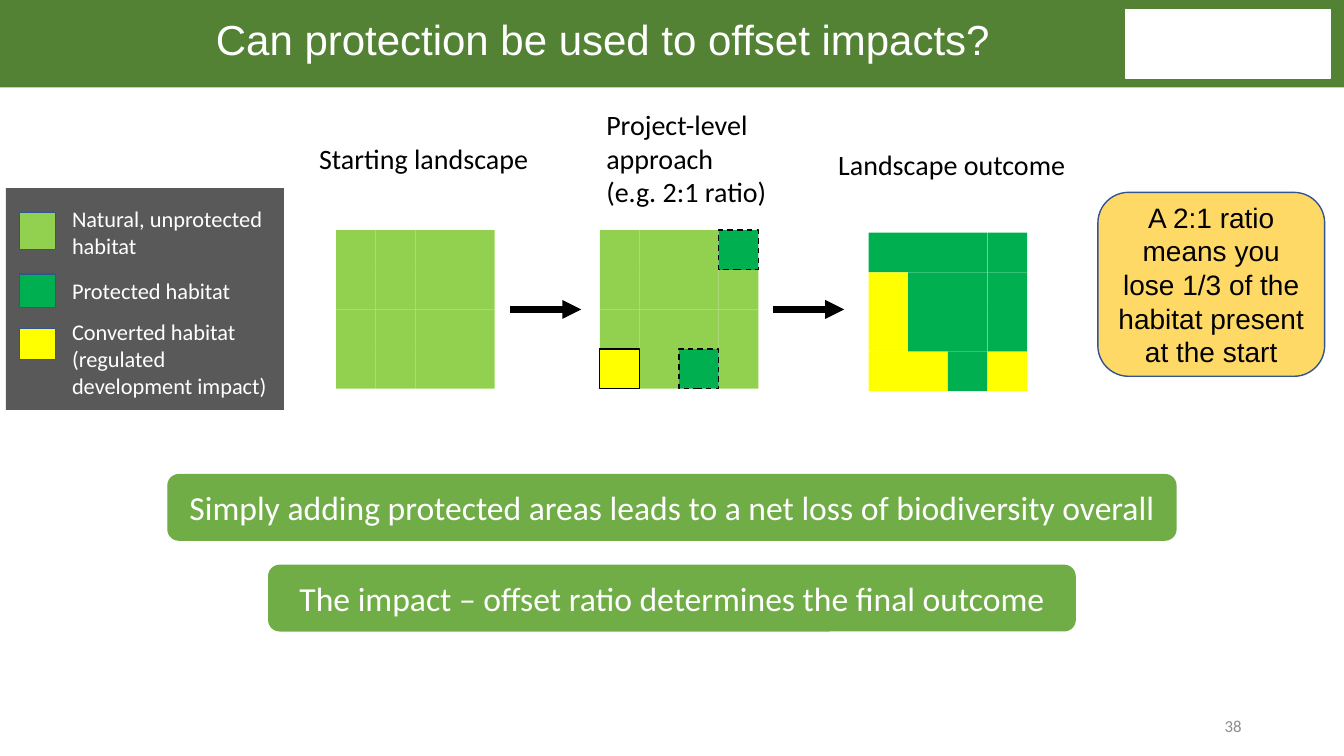
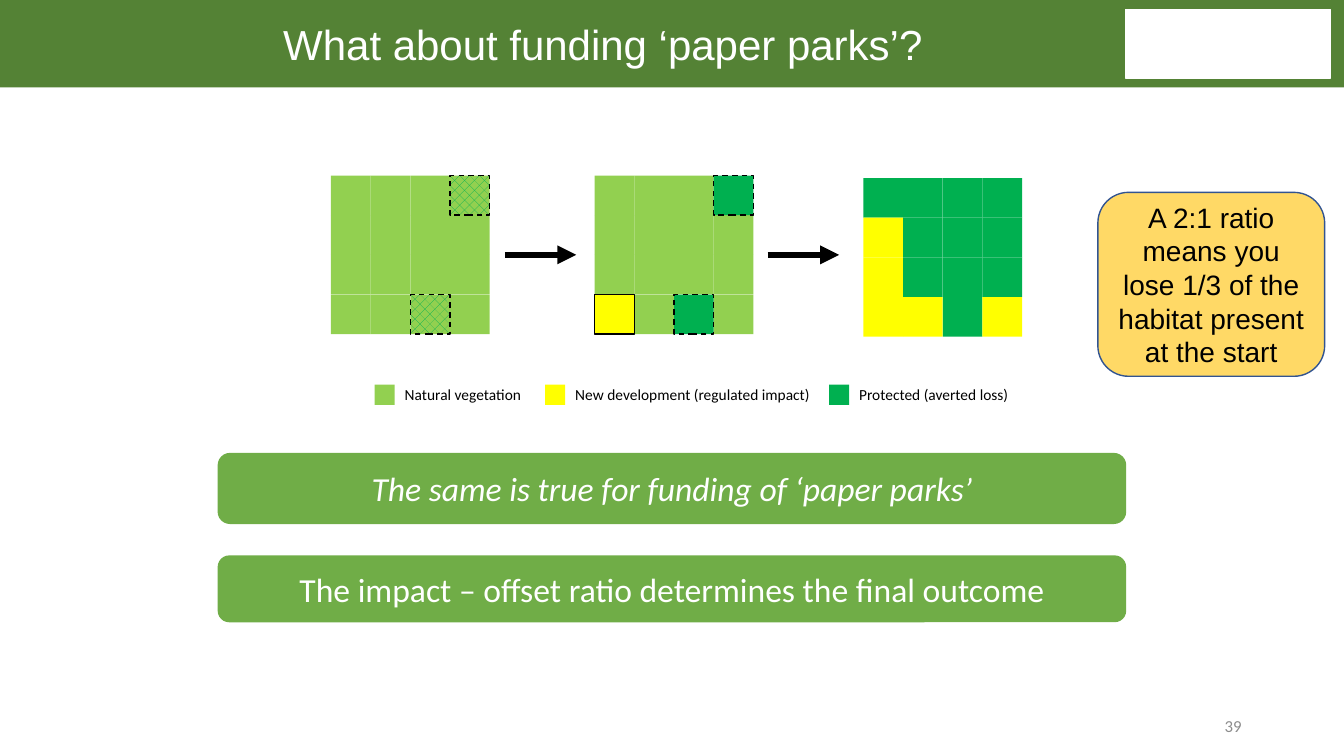
"""Build two slides on how protection and funding work as biodiversity offsets."""
from lxml import etree
from pptx import Presentation
from pptx.dml.color import RGBColor
from pptx.enum.dml import MSO_LINE, MSO_PATTERN
from pptx.enum.shapes import MSO_CONNECTOR, MSO_SHAPE as Shape
from pptx.enum.text import MSO_ANCHOR as Anchor, PP_ALIGN as Align
from pptx.oxml.ns import qn
from pptx.util import Inches, Pt

COLUMNS, ROWS = 160, 90
UNIT = Inches(13.33333) / COLUMNS
CELL = 4.72

WHITE = RGBColor(0xFF, 0xFF, 0xFF)
BLACK = RGBColor(0x00, 0x00, 0x00)
GREY = RGBColor(0x8C, 0x8C, 0x8C)
CHARCOAL = RGBColor(0x59, 0x59, 0x59)
BAND_GREEN = RGBColor(0x54, 0x82, 0x35)
BANNER_GREEN = RGBColor(0x70, 0xAD, 0x47)
NATURAL = RGBColor(0x92, 0xD0, 0x50)
PROTECTED = RGBColor(0x00, 0xB0, 0x50)
CONVERTED = RGBColor(0xFF, 0xFF, 0x00)
GOLD = RGBColor(0xFF, 0xD9, 0x66)
NAVY = RGBColor(0x32, 0x54, 0x91)

CELL_STYLES = {
    "n": {"fill": NATURAL},
    "p": {"fill": PROTECTED},
    "c": {"fill": CONVERTED},
    "C": {"fill": CONVERTED, "line": BLACK},
    "P": {"fill": PROTECTED, "line": BLACK, "dashed": True},
    "H": {"fill": PROTECTED, "back": NATURAL, "line": BLACK, "dashed": True},
}
PROJECT_STAGE = "nnnP nnnn nnnn CnPn"
OUTCOME_STAGE = "pppp cppp cppp ccpc"


def grid(*units):
    """Turn grid columns and rows into slide lengths."""
    return [round(unit * UNIT) for unit in units]


def write(box, text, size=16, color=BLACK, font="Calibri", align=Align.LEFT,
          anchor=Anchor.TOP, italic=False, spacing=1.0, wrap=True):
    """Fill a box with one paragraph per line of text."""
    frame = box.text_frame
    frame.word_wrap = wrap
    frame.vertical_anchor = anchor
    for index, line in enumerate(text.split("\n")):
        para = frame.add_paragraph() if index else frame.paragraphs[0]
        para.alignment = align
        para.line_spacing = spacing
        span = para.add_run()
        span.text = line
        span.font.size = Pt(size)
        span.font.name = font
        span.font.italic = italic
        span.font.color.rgb = color


def add_text(page, place, text, **style):
    """Add a text box at a grid place."""
    write(page.shapes.add_textbox(*grid(*place)), text, **style)


def add_box(page, place, fill, line=None, back=None, dashed=False, kind=Shape.RECTANGLE):
    """Add a filled preset shape, patterned when a back colour is given."""
    box = page.shapes.add_shape(kind, *grid(*place))
    box.shadow.inherit = False
    if back is None:
        box.fill.solid()
        box.fill.fore_color.rgb = fill
    else:
        box.fill.patterned()
        box.fill.pattern = MSO_PATTERN.PERCENT_30
        box.fill.fore_color.rgb = fill
        box.fill.back_color.rgb = back
    if line is None:
        box.line.fill.background()
    else:
        box.line.color.rgb = line
        box.line.width = Pt(1)
    if dashed:
        box.line.dash_style = MSO_LINE.DASH
    return box


def add_arrow(page, left, top, length):
    """Add a thick black arrow pointing right."""
    arrow = page.shapes.add_connector(
        MSO_CONNECTOR.STRAIGHT, *grid(left, top, left + length, top))
    arrow.line.color.rgb = BLACK
    arrow.line.width = Pt(4.5)
    etree.SubElement(arrow.line._get_or_add_ln(), qn("a:tailEnd"), type="triangle")
    etree.SubElement(arrow._element.spPr, qn("a:effectLst"))


def add_landscape(page, left, top, cells):
    """Draw a square of habitat cells, outlined ones in front."""
    placed = [(letter, row, column)
              for row, letters in enumerate(cells.split())
              for column, letter in enumerate(letters)]
    for letter, row, column in sorted(placed, key=lambda cell: cell[0].isupper()):
        place = (left + column * CELL, top + row * CELL, CELL, CELL)
        add_box(page, place, **CELL_STYLES[letter])


def add_stages(page, left, top, start):
    """Draw the three landscape stages and the arrows between them."""
    add_landscape(page, left, top, start)
    add_landscape(page, left + 31.4, top, PROJECT_STAGE)
    add_landscape(page, left + 63.4, top + 0.3, OUTCOME_STAGE)
    for offset in (20.7, 52):
        add_arrow(page, left + offset, top + 2 * CELL, 8.5)


def add_banner(page, top, width, text, height=7.8, italic=False):
    """Add a centred green message bar."""
    place = ((COLUMNS - width) / 2, top, width, height)
    box = add_box(page, place, BANNER_GREEN, BANNER_GREEN, kind=Shape.ROUNDED_RECTANGLE)
    write(box, text, size=24, color=WHITE, align=Align.CENTER,
          anchor=Anchor.MIDDLE, italic=italic)


def add_callout(page):
    """Add the rounded note on the offset ratio."""
    box = add_box(page, (130.7, 22.9, 27.0, 21.9), GOLD, NAVY, kind=Shape.ROUNDED_RECTANGLE)
    write(box, "A 2:1 ratio means you lose 1/3 of the habitat present at the start",
          size=20, font="Arial", align=Align.CENTER, anchor=Anchor.MIDDLE)


def add_page(deck, title, number, title_top):
    """Start a slide with its band, title, white panel and number."""
    page = deck.slides.add_slide(deck.slide_layouts[6])
    add_box(page, (0, 0, COLUMNS, 10.4), BAND_GREEN)
    add_box(page, (134, 1.1, 24.4, 8.2), WHITE, WHITE)
    add_text(page, (11.1, title_top, 121.4, 8.3), title, size=30, color=WHITE,
             font="Arial", align=Align.CENTER, anchor=Anchor.MIDDLE, spacing=0.9)
    add_text(page, (138.5, 84.5, 10.5, 3.7), number, size=12, color=GREY,
             align=Align.RIGHT, anchor=Anchor.MIDDLE)
    return page


def add_protection_page(deck):
    """Build the slide on protection as an offset."""
    page = add_page(deck, "Can protection be used to offset impacts?", "38", 0.8)
    add_box(page, (0.7, 22.4, 33.1, 26.4), CHARCOAL)
    legend = [
        (NATURAL, 25.3, 4.4, 23.8, 7.7, "Natural, unprotected habitat"),
        (PROTECTED, 32.6, 4, 32.4, 4.4, "Protected habitat"),
        (CONVERTED, 39.1, 3.7, 37.3, 10.9,
         "Converted habitat (regulated development impact)"),
    ]
    for color, top, height, text_top, text_height, text in legend:
        add_box(page, (2.3, top, 4.3, height), color, NAVY)
        add_text(page, (7.4, text_top, 26.4, text_height), text, color=WHITE)
    headings = [
        (36.8, 16.2, 28.4, 5.3, "Starting landscape"),
        (71, 12.2, 24.2, 13.3, "Project-level approach\n(e.g. 2:1 ratio)"),
        (98.6, 17, 29.8, 5.3, "Landscape outcome"),
    ]
    for *place, text in headings:
        add_text(page, place, text, size=20)
    add_stages(page, 40, 27.4, "nnnn nnnn nnnn nnnn")
    add_callout(page)
    add_banner(page, 56.5, 120,
               "Simply adding protected areas leads to a net loss of biodiversity overall")
    add_banner(page, 67.3, 96, "The impact – offset ratio determines the final outcome")


def add_funding_page(deck):
    """Build the slide on funding paper parks."""
    page = add_page(deck, "What about funding ‘paper parks’?", "39", 1.4)
    add_stages(page, 39.4, 20.9, "nnnH nnnn nnnn nnHn")
    legend = [
        (44.6, 16.4, NATURAL, "Natural vegetation"),
        (64.9, 30.6, CONVERTED, "New development (regulated impact)"),
        (98.7, 20.4, PROTECTED, "Protected (averted loss)"),
    ]
    for left, width, color, text in legend:
        add_box(page, (left, 45.8, 2.4, 2.4), color)
        add_text(page, (left + 2.4, 45.2, width, 3.5), text, size=11, wrap=False)
    add_callout(page)
    add_banner(page, 54, 108, "The same is true for funding of ‘paper parks’",
               height=8.3, italic=True)
    add_banner(page, 66.2, 108, "The impact – offset ratio determines the final outcome")


def main():
    """Build and save the deck."""
    deck = Presentation()
    deck.slide_width, deck.slide_height = grid(COLUMNS, ROWS)
    add_protection_page(deck)
    add_funding_page(deck)
    deck.save("out.pptx")


if __name__ == "__main__":
    main()
